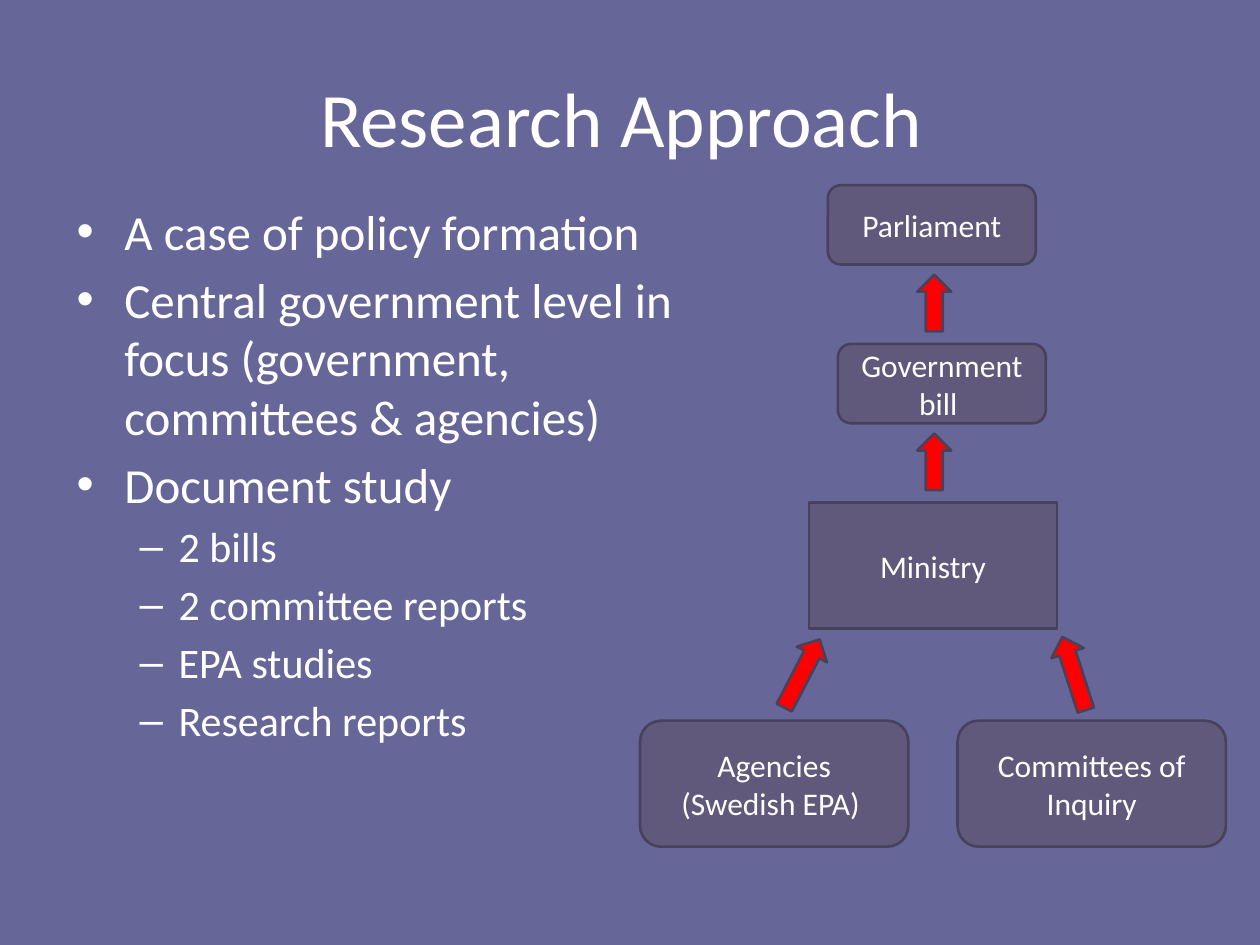
"""Build the Research Approach slide with its policy flow diagram."""
from lxml import etree
from pptx import Presentation
from pptx.dml.color import RGBColor
from pptx.enum import shapes as kinds, text as txt
from pptx.oxml import ns
from pptx.util import Inches, Pt


def color(code):
    return RGBColor.from_string(code)


def style(para, size, align):
    para.alignment = align
    for run in para.runs:
        run.font.name = "Calibri"
        run.font.size = Pt(size)
        run.font.color.rgb = color("FFFFFF")


deck = Presentation()
deck.slide_width, deck.slide_height = Inches(10), Inches(7.5)
slide = deck.slides.add_slide(deck.slide_layouts[5])
slide.background.fill.solid()
slide.background.fill.fore_color.rgb = color("666699")

MID, LEFT = txt.PP_ALIGN.CENTER, txt.PP_ALIGN.LEFT
title = slide.shapes.title
title.left, title.top = Inches(0.5), Inches(0.3)
title.width, title.height = Inches(9), Inches(1.25)
title.text_frame.text = "Research Approach "
title.text_frame.vertical_anchor = txt.MSO_ANCHOR.MIDDLE
style(title.text_frame.paragraphs[0], 44, MID)

points = [
    (0, "A case of policy formation"),
    (0, "Central government level in focus (government, committees & agencies)"),
    (0, "Document study"),
    (1, "2 bills"),
    (1, "2 committee reports"),
    (1, "EPA studies"),
    (1, "Research reports"),
]
levels = [(28, 5, 0.38, 0.38, "•"), (24, 4.3, 0.81, 0.31, "–")]
body = slide.shapes.add_textbox(Inches(0.51), Inches(1.55), Inches(5.04), Inches(4.95))
frame = body.text_frame
frame.word_wrap = True
frame.text = "\n".join(words for level, words in points)
for para, (level, words) in zip(frame.paragraphs, points):
    size, gap, margin, hang, mark = levels[level]
    para.level = level
    para.space_before = Pt(gap)
    style(para, size, LEFT)
    props = para._p.get_or_add_pPr()
    props.set("marL", str(Inches(margin)))
    props.set("indent", str(-Inches(hang)))
    font = etree.SubElement(props, ns.qn("a:buFont"))
    font.set("typeface", "Arial")
    etree.SubElement(props, ns.qn("a:buChar")).set("char", mark)

RECT = kinds.MSO_SHAPE.RECTANGLE
ROUND = kinds.MSO_SHAPE.ROUNDED_RECTANGLE
ARROW = kinds.MSO_SHAPE.UP_ARROW
parts = [
    (RECT, 6.42, 3.99, 1.97, 1, 0, "Ministry"),
    (ARROW, 6.23, 5.04, 0.27, 0.61, 27.4, ""),
    (ARROW, 8.39, 5.04, 0.27, 0.61, 342.2, ""),
    (ROUND, 5.08, 5.72, 2.13, 1, 0, "Agencies\n(Swedish EPA) "),
    (ROUND, 7.6, 5.72, 2.13, 1, 0, "Committees of Inquiry"),
    (ARROW, 7.28, 3.44, 0.27, 0.45, 0, ""),
    (ROUND, 6.65, 2.73, 1.65, 0.63, 0, "Government bill "),
    (ROUND, 6.57, 1.47, 1.65, 0.63, 0, "Parliament"),
    (ARROW, 7.28, 2.18, 0.27, 0.45, 0, ""),
]
for kind, left, top, width, height, turn, words in parts:
    part = slide.shapes.add_shape(
        kind, Inches(left), Inches(top), Inches(width), Inches(height))
    part.rotation = turn
    part.shadow.inherit = False
    part.fill.solid()
    part.fill.fore_color.rgb = color("FF0000" if kind == ARROW else "60597B")
    part.line.color.rgb = color("47425B")
    part.line.width = Pt(1.5)
    if words:
        part.text_frame.text = words
        part.text_frame.word_wrap = True
        part.text_frame.vertical_anchor = txt.MSO_ANCHOR.MIDDLE
        for para in part.text_frame.paragraphs:
            style(para, 18, MID)

deck.save("out.pptx")
